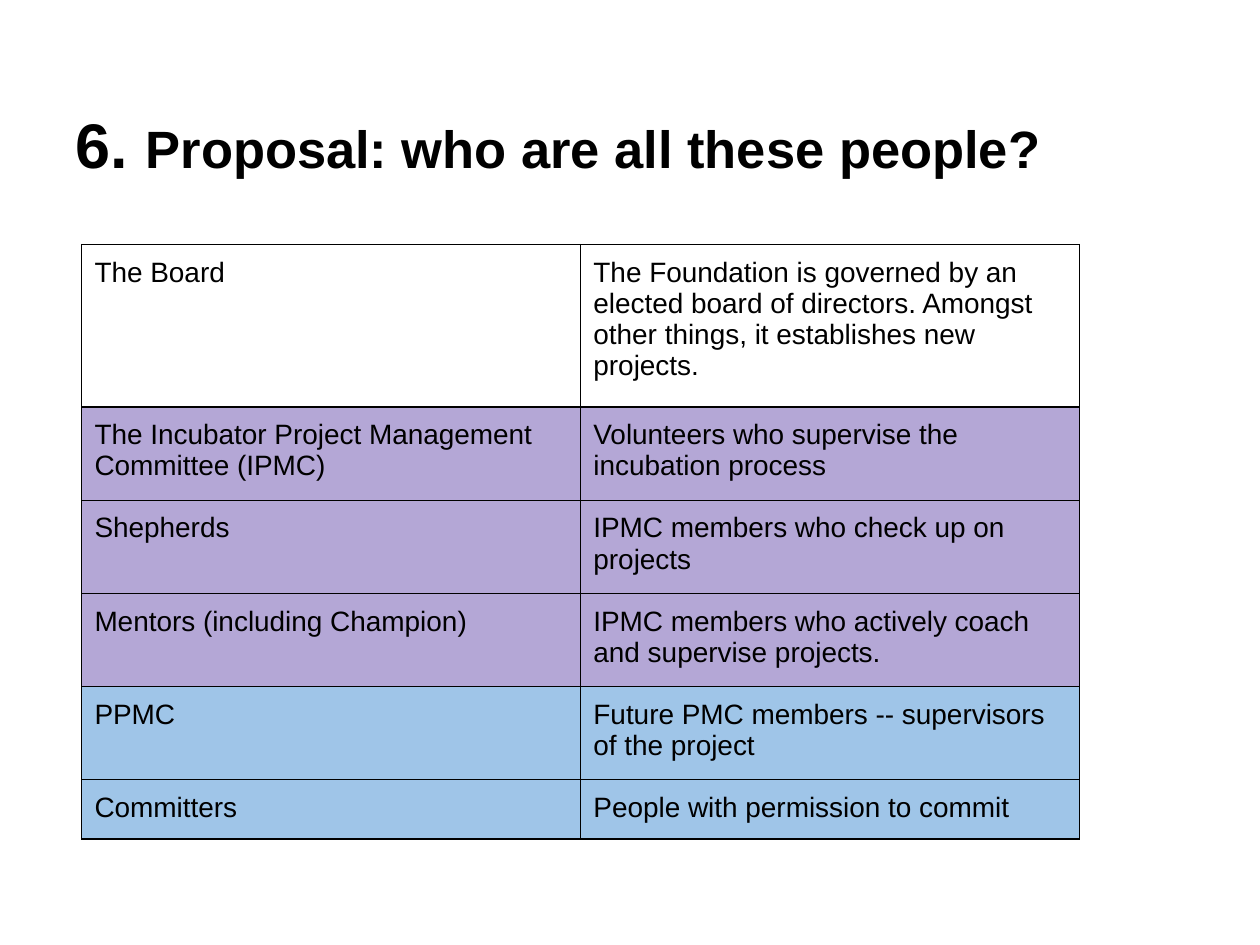
from dataclasses import dataclass

from lxml.etree import SubElement
from pptx import Presentation
from pptx.dml.color import RGBColor
from pptx.enum.text import MSO_ANCHOR, MSO_AUTO_SIZE, PP_ALIGN
from pptx.oxml.ns import qn
from pptx.slide import Slide
from pptx.table import _Cell
from pptx.util import Inches, Pt

COLORS = {"ink": "000000", "incubator": "B4A7D6", "project": "9FC5E8"}
FONT = "Arial"
INSET = Inches(0.1)
COLUMN_WIDTH = 3.96


@dataclass
class Role:
    name: str
    duty: str
    height: float = 0.74
    color: str | None = None


ROLES = [
    Role("The Board",
         "The Foundation is governed by an elected board of directors. "
         "Amongst other things, it establishes new projects.", height=1.29),
    Role("The Incubator Project Management Committee (IPMC)",
         "Volunteers who supervise the incubation process", color="incubator"),
    Role("Shepherds", "IPMC members who check up on projects", color="incubator"),
    Role("Mentors (including Champion)",
         "IPMC members who actively coach and supervise projects.", color="incubator"),
    Role("PPMC", "Future PMC members -- supervisors of the project", color="project"),
    Role("Committers", "People with permission to commit", height=0.47, color="project"),
]


def rgb(name: str) -> RGBColor:
    return RGBColor.from_string(COLORS[name])


def set_insets(target) -> None:
    target.margin_left = target.margin_right = INSET
    target.margin_top = target.margin_bottom = INSET


def add_borders(cell: _Cell) -> None:
    properties = cell._tc.get_or_add_tcPr()
    for side in ("lnL", "lnR", "lnT", "lnB"):
        border = SubElement(properties, qn(f"a:{side}"), w=str(Pt(0.75)))
        fill = SubElement(border, qn("a:solidFill"))
        SubElement(fill, qn("a:srgbClr"), val=COLORS["ink"])


def fill_cell(cell: _Cell, text: str, color: str | None) -> None:
    cell.text = text
    set_insets(cell)
    cell.vertical_anchor = MSO_ANCHOR.TOP
    font = cell.text_frame.paragraphs[0].font
    font.name, font.size, font.bold = FONT, Pt(16), False
    font.color.rgb = rgb("ink")
    add_borders(cell)
    if color:
        cell.fill.solid()
        cell.fill.fore_color.rgb = rgb(color)
    else:
        cell.fill.background()


def add_title(slide: Slide) -> None:
    title = slide.shapes.title
    title.left, title.top = Inches(0.5), Inches(0.3)
    title.width, title.height = Inches(9), Inches(1.25)
    frame = title.text_frame
    frame.word_wrap = True
    frame.auto_size = MSO_AUTO_SIZE.NONE
    frame.vertical_anchor = MSO_ANCHOR.BOTTOM
    set_insets(frame)
    heading = frame.paragraphs[0]
    heading.alignment = PP_ALIGN.LEFT
    heading.line_spacing = 0.93
    heading.font.name, heading.font.bold = FONT, True
    heading.font.color.rgb = rgb("ink")
    for text, size in (("6. ", 36), ("Proposal: who are all these people?", 30)):
        run = heading.add_run()
        run.text = text
        run.font.size = Pt(size)


def add_roles(slide: Slide, roles: list[Role]) -> None:
    height = sum(role.height for role in roles)
    table = slide.shapes.add_table(
        len(roles), 2, Inches(0.65), Inches(1.94),
        Inches(2 * COLUMN_WIDTH), Inches(height)).table
    table.first_row = table.horz_banding = False
    for column in table.columns:
        column.width = Inches(COLUMN_WIDTH)
    for row, role in zip(table.rows, roles):
        row.height = Inches(role.height)
        for cell, text in zip(row.cells, (role.name, role.duty)):
            fill_cell(cell, text, role.color)


def main() -> None:
    presentation = Presentation()
    presentation.slide_width, presentation.slide_height = Inches(10), Inches(7.5)
    slide = presentation.slides.add_slide(presentation.slide_layouts[5])
    add_title(slide)
    add_roles(slide, ROLES)
    presentation.save("out.pptx")


if __name__ == "__main__":
    main()
